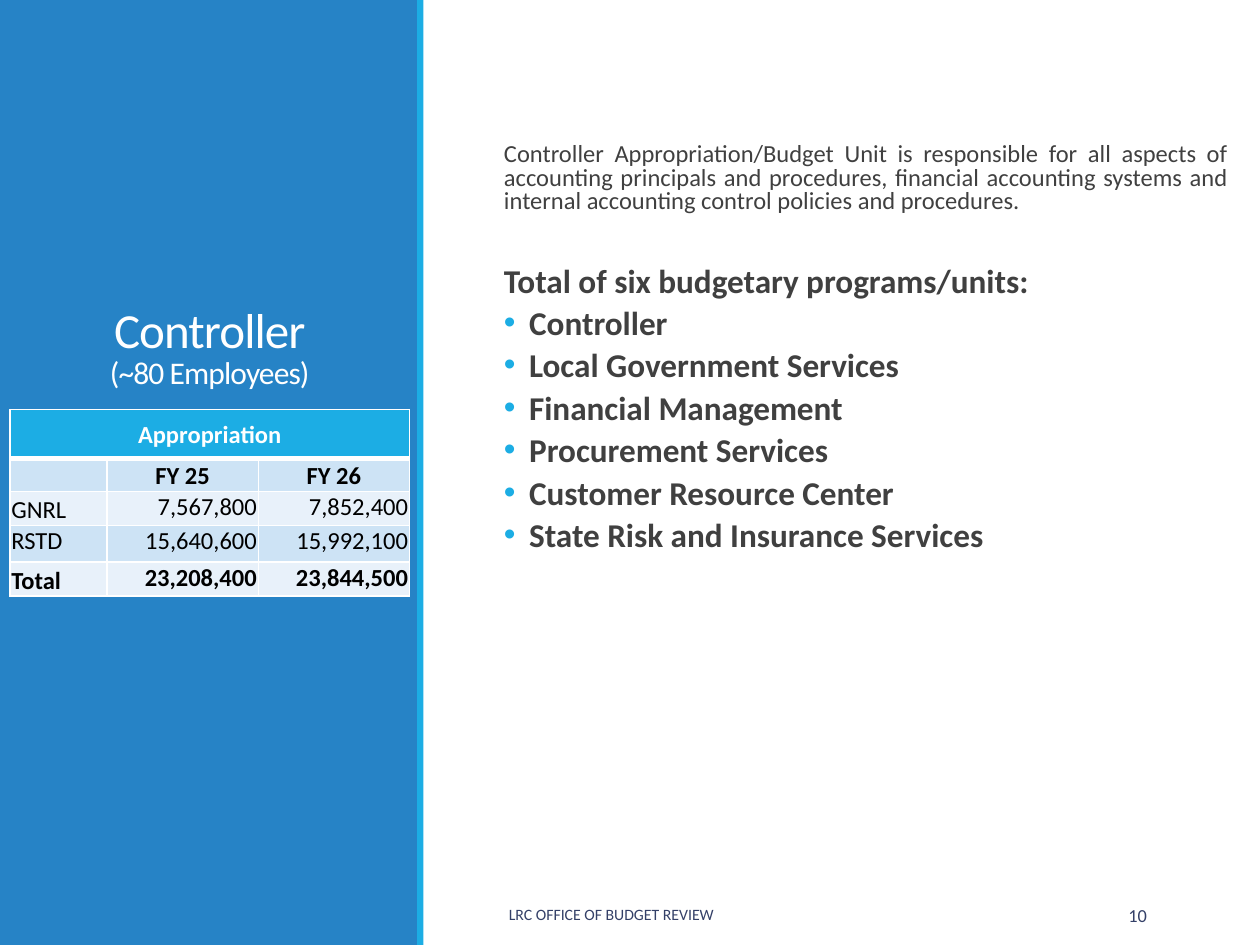
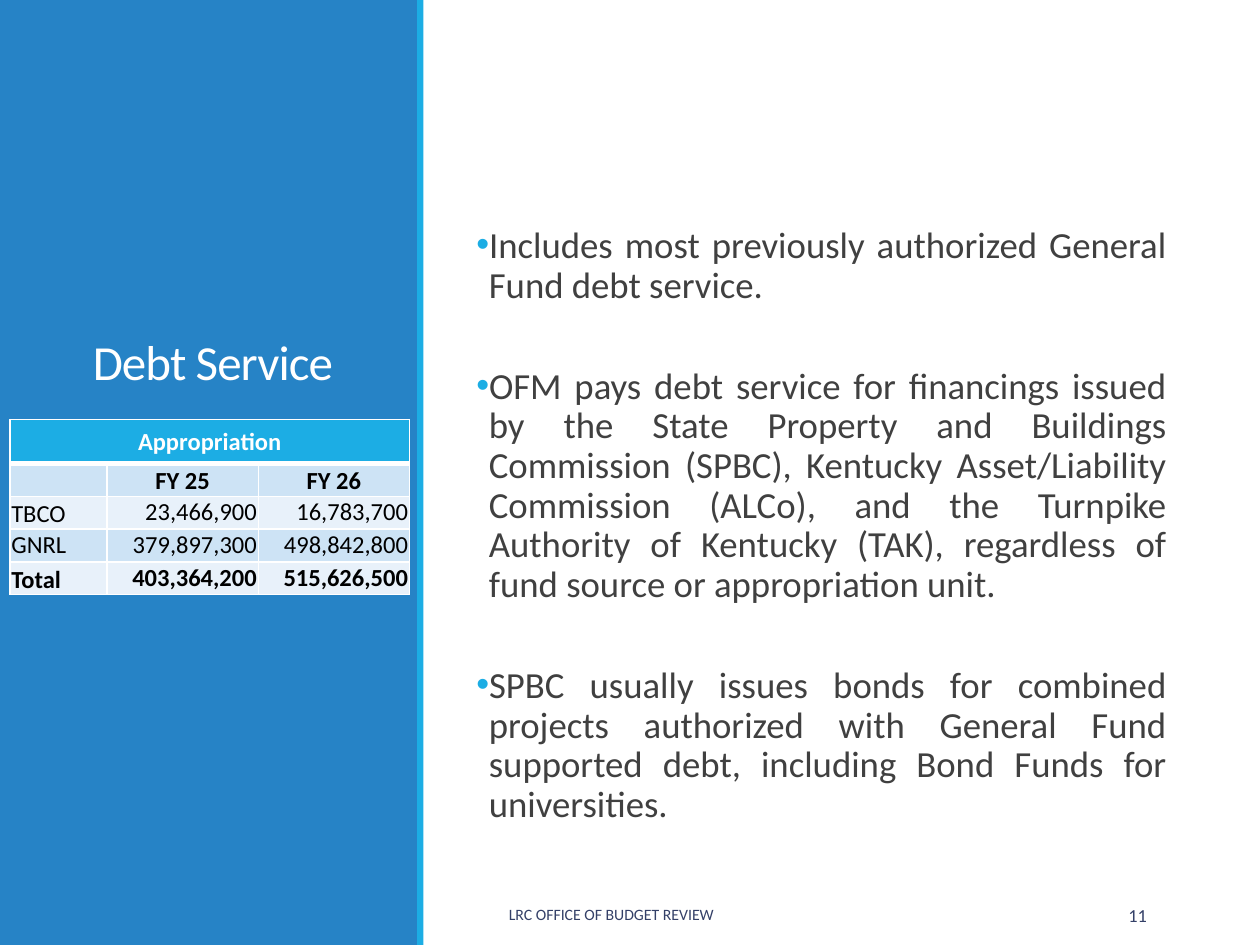
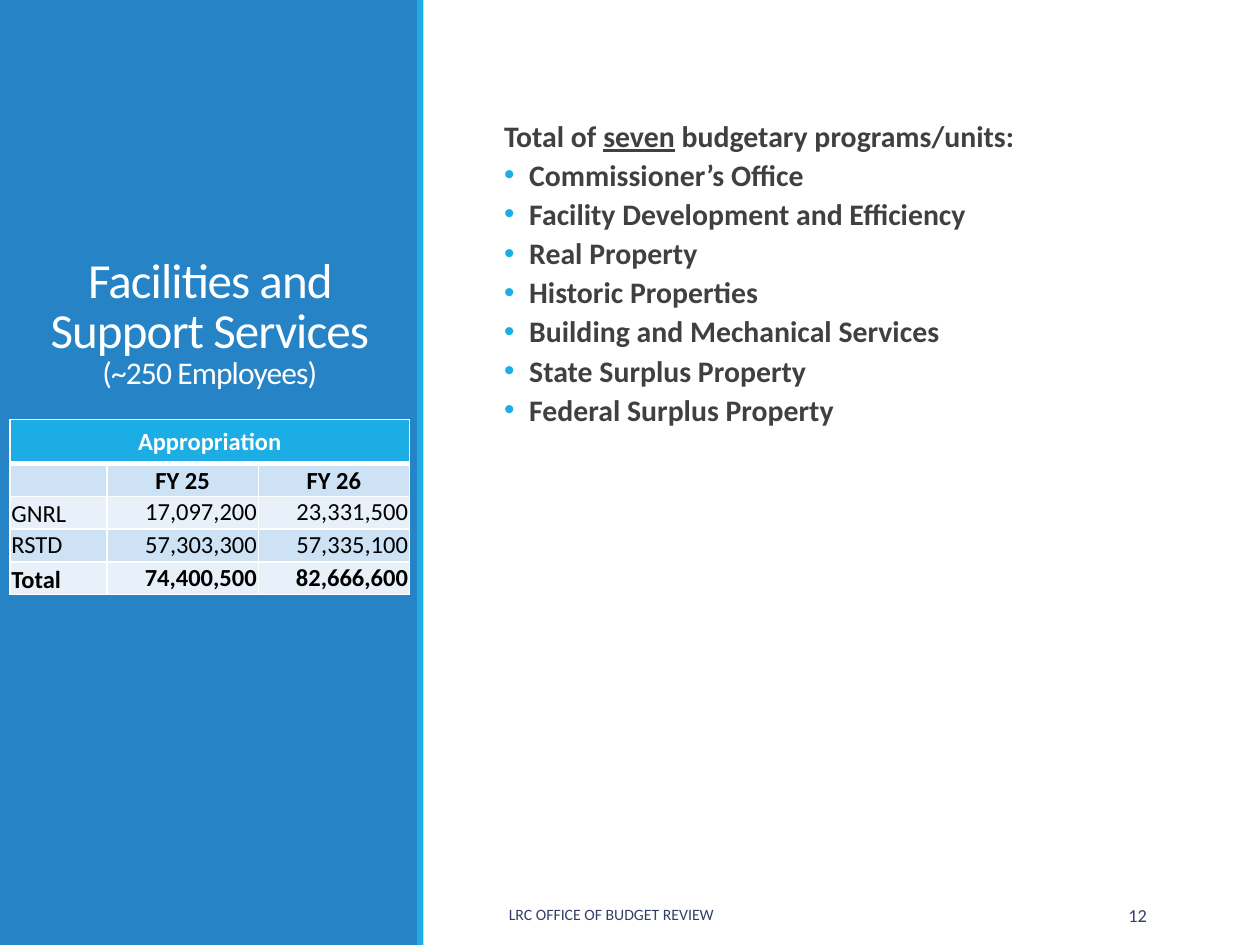
import lxml.etree
import pptx
import pptx.dml.color
import pptx.enum.shapes
import pptx.enum.text
import pptx.oxml.ns
import pptx.util

Inches = pptx.util.Inches
Pt = pptx.util.Pt
qn = pptx.oxml.ns.qn
ALIGN = pptx.enum.text.PP_ALIGN
ANCHOR = pptx.enum.text.MSO_ANCHOR

HUES = {
    "panel": "2683C6", "accent": "1CADE4", "white": "FFFFFF", "black": "000000",
    "body": "404040", "foot": "344068", "dark": "CDE3F5", "light": "E8F1FA",
}
FIRST = 10
COLS = [0.77, 1.2, 1.2]
INDENT = {"plain": (0.22, 0), "unit": (0.42, -0.2), "point": (0.1, -0.1)}

PAGES = [
    {
        "title": ["Controller", "(~80 Employees)"], "name": (0, 3.33),
        "body": (0.75, 5.97, 6.31), "inset": 0.39, "pitch": 0.8,
        "lines": [
            ("plain", 14, 2, [("Controller Appropriation/Budget Unit is responsible for all aspects of accounting principals and procedures, financial accounting systems and internal accounting control policies and procedures.", False, False)]),
            ("plain", 19, 26.5, [("Total of six budgetary programs/units:", True, False)]),
        ] + [("unit", 19, 2, [(unit, True, False)]) for unit in [
            "Controller", "Local Government Services", "Financial Management",
            "Procurement Services", "Customer Resource Center",
            "State Risk and Insurance Services"]],
        "top": 3.25, "rows": [0.39, 0.26, 0.27, 0.29, 0.27],
        "funds": [["GNRL", "7,567,800", "7,852,400"],
                  ["RSTD", "15,640,600", "15,992,100"],
                  ["Total", "23,208,400", "23,844,500"]],
    },
    {
        "title": ["Debt Service"], "name": (0.38, 2.62),
        "body": (1.75, 5.48, 5.31), "inset": 0.05, "pitch": 0.9,
        "lines": [("point", 21, gap, [(text, False, False)]) for gap, text in [
            (2, "Includes most previously authorized General Fund debt service."),
            (31, "OFM pays debt service for financings issued by the State Property and Buildings Commission (SPBC), Kentucky Asset/Liability Commission (ALCo), and the Turnpike Authority of Kentucky (TAK), regardless of fund source or appropriation unit."),
            (31, "SPBC usually issues bonds for combined projects authorized with General Fund supported debt, including Bond Funds for universities.")]],
        "top": 3.33, "rows": [0.35] + [0.26] * 4,
        "funds": [["TBCO", "23,466,900", "16,783,700"],
                  ["GNRL", "379,897,300", "498,842,800"],
                  ["Total", "403,364,200", "515,626,500"]],
    },
    {
        "title": ["Facilities and Support Services", "(~250 Employees)"], "name": (0, 3.33),
        "body": (0.94, 5.48, 6.12), "inset": 0.05, "pitch": 0.8,
        "lines": [
            ("plain", 17, 2, [("Total of ", True, False), ("seven", True, True),
                              (" budgetary programs/units:", True, False)]),
        ] + [("unit", 17, 2, [(unit, True, False)]) for unit in [
            "Commissioner’s Office", "Facility Development and Efficiency", "Real Property",
            "Historic Properties", "Building and Mechanical Services",
            "State Surplus Property", "Federal Surplus Property"]],
        "top": 3.33, "rows": [0.35] + [0.26] * 4,
        "funds": [["GNRL", "17,097,200", "23,331,500"],
                  ["RSTD", "57,303,300", "57,335,100"],
                  ["Total", "74,400,500", "82,666,600"]],
    },
]


def paint(fill, hue):
    fill.solid()
    fill.fore_color.rgb = pptx.dml.color.RGBColor.from_string(HUES[hue])


def write(para, text, size, hue, bold=False):
    run = para.add_run()
    run.text = text
    run.font.name = "Calibri"
    run.font.size = Pt(size)
    run.font.bold = bold
    paint(run.font.fill, hue)
    return run


deck = pptx.Presentation()
deck.slide_width, deck.slide_height = Inches(10), Inches(7.5)
layout = deck.slide_layouts[5]
slides = [deck.slides.add_slide(layout) for page in PAGES]

for step, (left, width, hue) in enumerate([(0, 3.32, "panel"), (3.31, 0.05, "accent")]):
    band = slides[0].shapes.add_shape(
        pptx.enum.shapes.MSO_SHAPE.RECTANGLE, Inches(left), 0, Inches(width), Inches(7.5))
    band.shadow.inherit = False
    paint(band.fill, hue)
    band.line.fill.background()
    band.element.nvSpPr.cNvPr.id = 20 + step
    layout.shapes.element.insert(2 + step, band.element)

for number, (slide, page) in enumerate(zip(slides, PAGES), FIRST):
    title = slide.shapes.title
    left, width = page["name"]
    title.left, title.top = Inches(left), Inches(0.65)
    title.width, title.height = Inches(width), Inches(2.5)
    frame = title.text_frame
    frame.word_wrap = True
    frame.auto_size = pptx.enum.text.MSO_AUTO_SIZE.NONE
    frame.vertical_anchor = ANCHOR.BOTTOM
    para = frame.paragraphs[0]
    para.alignment = ALIGN.CENTER
    para.line_spacing = 0.85
    for index, text in enumerate(page["title"]):
        if index:
            para.add_line_break()
        run = write(para, text, 18 if index else 28, "white")
        run.font._element.set("spc", "-50")

    top, width, height = page["body"]
    box = slide.shapes.add_textbox(Inches(3.78), Inches(top), Inches(width), Inches(height))
    frame = box.text_frame
    frame.word_wrap = True
    frame.margin_left = frame.margin_right = 0
    frame.margin_top = Inches(page["inset"])
    for index, (kind, size, gap, runs) in enumerate(page["lines"]):
        para = frame.add_paragraph() if index else frame.paragraphs[0]
        para.alignment = ALIGN.JUSTIFY
        para.line_spacing = page["pitch"]
        para.space_before, para.space_after = Pt(gap), Pt(4)
        props = para._p.get_or_add_pPr()
        margin, hang = INDENT[kind]
        margin, hang = (margin, hang) if hang else (margin, 0)
        props.set("marL", str(Inches(margin)))
        props.set("indent", str(Inches(hang)))
        if hang:
            color = lxml.etree.SubElement(props, qn("a:buClr"))
            lxml.etree.SubElement(color, qn("a:srgbClr"), val=HUES["accent"])
            lxml.etree.SubElement(props, qn("a:buFont"), typeface="Arial")
            lxml.etree.SubElement(props, qn("a:buChar"), char="•")
        for text, bold, under in runs:
            write(para, text, size, "body", bold).font.underline = under

    for left, width, text, size, align in [
            (3.94, 3.81, "LRC OFFICE OF BUDGET REVIEW", 9, ALIGN.LEFT),
            (8.12, 1.08, str(number), 10.5, ALIGN.RIGHT)]:
        foot = slide.shapes.add_textbox(Inches(left), Inches(7.06), Inches(width), Inches(0.4))
        foot.text_frame.word_wrap = True
        foot.text_frame.vertical_anchor = ANCHOR.MIDDLE
        para = foot.text_frame.paragraphs[0]
        para.alignment = align
        write(para, text, size, "foot")

    heights = page["rows"]
    table = slide.shapes.add_table(
        5, 3, Inches(0.08), Inches(page["top"]), Inches(sum(COLS)), Inches(sum(heights))).table
    for column, width in zip(table.columns, COLS):
        column.width = Inches(width)
    for row, height in zip(table.rows, heights):
        row.height = Inches(height)
    table.cell(0, 0).merge(table.cell(0, 2))
    grid = [["Appropriation", "", ""], ["", "FY 25", "FY 26"]] + page["funds"]
    for y, texts in enumerate(grid):
        for x, text in enumerate(texts):
            cell = table.cell(y, x)
            cell.margin_left = cell.margin_right = cell.margin_top = Inches(0.01)
            cell.margin_bottom = 0
            if y == 0:
                cell.vertical_anchor = ANCHOR.MIDDLE
            elif y == 1 or (x == 0 and y != 3):
                cell.vertical_anchor = ANCHOR.BOTTOM
            else:
                cell.vertical_anchor = ANCHOR.TOP
            props = cell._tc.get_or_add_tcPr()
            for side in "LRTB" if y == 0 else "LRB":
                thick = 3 if y == 0 and side == "B" else 1
                edge = lxml.etree.SubElement(props, qn("a:ln" + side), w=str(Pt(thick)))
                fill = lxml.etree.SubElement(edge, qn("a:solidFill"))
                lxml.etree.SubElement(fill, qn("a:srgbClr"), val=HUES["white"])
            paint(cell.fill, "accent" if y == 0 else "dark" if y % 2 else "light")
            para = cell.text_frame.paragraphs[0]
            if text:
                para.alignment = ALIGN.CENTER if y < 2 else ALIGN.RIGHT if x else ALIGN.LEFT
                write(para, text, 14, "black" if y else "white", y in (0, 1, 4))
            else:
                lxml.etree.SubElement(para._p, qn("a:endParaRPr"), sz="1400")

deck.save("out.pptx")
